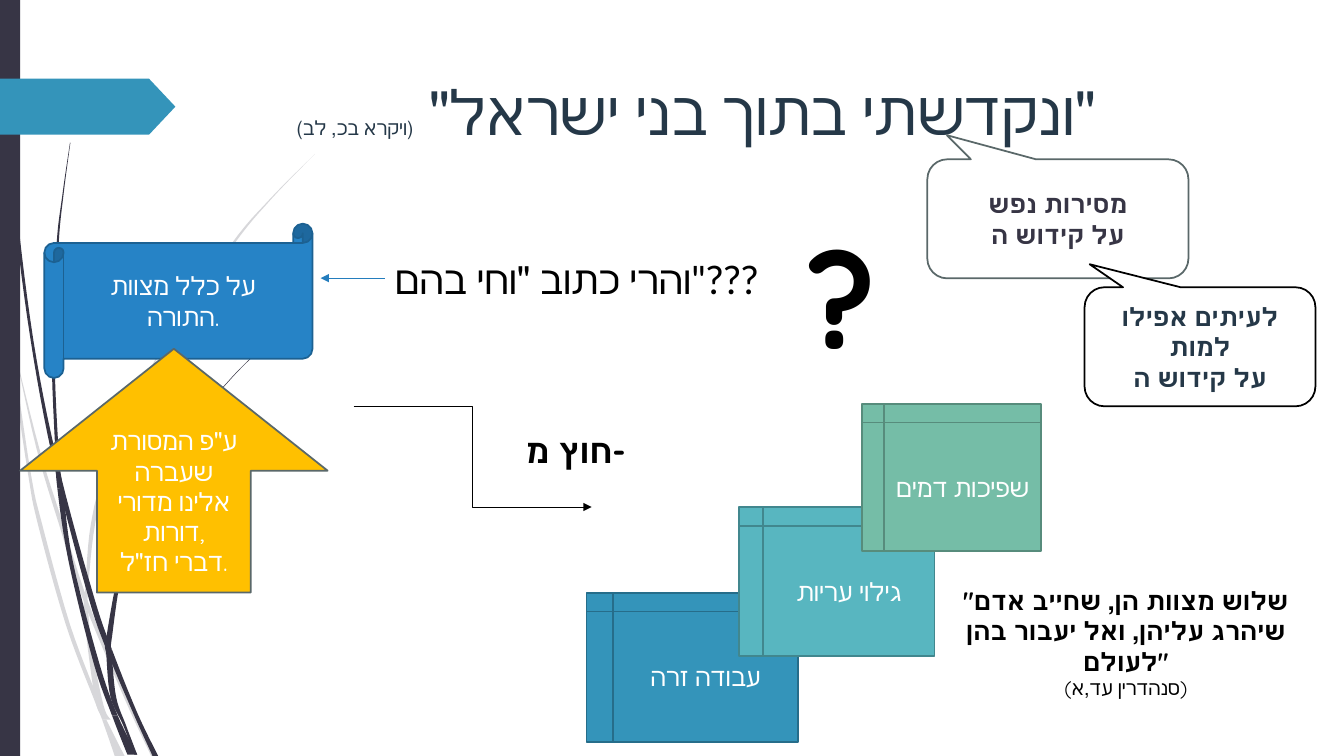
import pptx
import pptx.util
import pptx.dml.color
import pptx.enum.shapes
import pptx.enum.text
import pptx.oxml.ns
import lxml.etree

Pt = pptx.util.Pt
RGBColor = pptx.dml.color.RGBColor
KIND = pptx.enum.shapes.MSO_SHAPE
LINK = pptx.enum.shapes.MSO_CONNECTOR
ALIGN = pptx.enum.text.PP_ALIGN
ANCHOR = pptx.enum.text.MSO_ANCHOR
qn = pptx.oxml.ns.qn

DARK = RGBColor(0x37, 0x35, 0x45)
PALE = RGBColor(0xD7, 0xD7, 0xDA)
NAVY = RGBColor(0x25, 0x38, 0x48)
TEAL = RGBColor(0x34, 0x94, 0xBA)
DEEP = RGBColor(0x26, 0x6D, 0x8A)
AQUA = RGBColor(0x58, 0xB6, 0xC0)
POOL = RGBColor(0x41, 0x87, 0x8E)
MINT = RGBColor(0x75, 0xBD, 0xA7)
MOSS = RGBColor(0x57, 0x8C, 0x7C)
BLUE = RGBColor(0x26, 0x83, 0xC6)
INK = RGBColor(0x1C, 0x61, 0x92)
SKY = RGBColor(0x24, 0x7D, 0xBD)
GOLD = RGBColor(0xFF, 0xC0, 0x00)
GREY = RGBColor(0x5A, 0x68, 0x69)
BLACK = RGBColor(0, 0, 0)
WHITE = RGBColor(0xFF, 0xFF, 0xFF)
SANS = "Quicksand"


def dress(shape, fill, edge=None):
    shape.shadow.inherit = False
    shape.fill.solid()
    shape.fill.fore_color.rgb = fill
    if edge is None:
        shape.line.fill.background()
    else:
        shape.line.color.rgb = edge
        shape.line.width = Pt(1.25)


def write(frame, paras, color, align, anchor):
    frame.word_wrap = True
    frame.vertical_anchor = anchor
    for i, runs in enumerate(paras):
        para = frame.paragraphs[0] if i == 0 else frame.add_paragraph()
        para.alignment = align
        for text, size, face, bold in runs:
            run = para.add_run()
            run.text = text
            run.font.size = Pt(size)
            run.font.name = face
            run.font.bold = bold
            run.font.color.rgb = color


deck = pptx.Presentation()
deck.slide_width, deck.slide_height = Pt(960), Pt(540)
slide = deck.slides.add_slide(deck.slide_layouts[5])
shapes = slide.shapes

strands = [
    (PALE, (1, 6), [(0, 1, 209), (7, 9, 252), (20, 22, 338), (27, 30, 374),
                    (47, 50, 446), (67, 70, 499), (73, 76, 514), (82, 89, 540)]),
    (PALE, (3,), [(10, 10, 248), (26, 28, 320), (42, 45, 374), (60, 63, 430),
                  (89, 91, 499), (108, 112, 540)]),
    (PALE, (6, 7), [(225, 225, 110), (193, 194, 142), (164, 166, 176),
                    (114, 115, 251), (77, 79, 332), (65, 68, 374), (61, 63, 420),
                    (60, 63, 436), (63, 66, 465), (69, 74, 504), (76, 79, 514)]),
    (DARK, (4, 6), [(2, 3, 0), (5, 6, 79), (12, 14, 168), (24, 26, 256),
                    (40, 43, 338), (63, 67, 426), (76, 80, 464), (95, 98, 509),
                    (109, 113, 540)]),
    (DARK, (4, 5, 8), [(50, 50.3, 102), (44.6, 45.4, 139), (40.3, 41.8, 176),
                       (37, 39, 251), (39.6, 42, 324), (41, 45, 349),
                       (49, 52, 401), (67, 71, 474), (80, 84, 511), (91, 98, 539)]),
    (DARK, (5, 6, 8), [(187, 187.5, 248), (166, 166.5, 269), (147, 147.7, 292),
                       (112, 113.5, 342), (88, 90, 397), (76, 80, 455),
                       (76, 80, 468), (79, 83, 498), (88, 90, 518), (96, 98, 539)]),
]
for color, cuts, rows in strands:
    ends = [rows[0]] + rows + [rows[-1]]
    curve = []
    for a, b, c, d in zip(ends, ends[1:], ends[2:], ends[3:]):
        for step in range(6):
            t = step / 6
            curve.append([
                q + t * (r - p + t * (2 * p - 5 * q + 4 * r - s
                                      + t * (3 * q - p - 3 * r + s))) / 2
                for p, q, r, s in zip(a, b, c, d)])
    curve.append(rows[-1])
    for start, stop in zip((0, *cuts), (*cuts, len(rows) - 1)):
        part = curve[start * 6:stop * 6 + 1]
        left = [(x * 100, y * 100) for x, _, y in part]
        right = [(x * 100, y * 100) for _, x, y in part]
        edge = left + right[::-1]
        pen = shapes.build_freeform(*edge[0], scale=Pt(0.01))
        pen.add_line_segments(edge[1:], close=True)
        dress(pen.convert_to_shape(), color)

bar = shapes.add_shape(KIND.RECTANGLE, 0, 0, Pt(14.4), Pt(540))
dress(bar, DARK)
flag = shapes.add_shape(KIND.PENTAGON, 0, Pt(56.2), Pt(125.3), Pt(40))
flag.adjustments[0] = 0.47
dress(flag, TEAL)

title = shapes.title
title.element.getparent().append(title.element)
title.left, title.top, title.width, title.height = Pt(204.5), Pt(49), Pt(702), Pt(100.8)
write(title.text_frame, [[('"ונקדשתי בתוך בני ישראל" ', 44, "Lato", False),
                          ("(ויקרא בכ, לב)", 14, SANS, False)]],
      NAVY, ALIGN.LEFT, ANCHOR.TOP)
title.text_frame.paragraphs[0]._p.get_or_add_pPr().set("rtl", "1")

cards = [
    (KIND.ROUNDED_RECTANGULAR_CALLOUT, (662.4, 113.8, 186.5, 85), (-0.425, -0.703),
     WHITE, GREY, DARK, True, ["מסירות נפש", "על קידוש ה"]),
    (KIND.ROUNDED_RECTANGULAR_CALLOUT, (774.7, 205.2, 164.9, 85), (-0.478, -0.694),
     WHITE, BLACK, NAVY, True, ["לעיתים אפילו למות", "על קידוש ה"]),
    (KIND.HORIZONTAL_SCROLL, (31.7, 159.8, 191.5, 110.2), (),
     BLUE, INK, WHITE, False, ["על כלל מצוות התורה."]),
    (KIND.FLOWCHART_INTERNAL_STORAGE, (419, 423.4, 151.2, 106.6), (),
     TEAL, DEEP, WHITE, False, ["עבודה זרה"]),
    (KIND.FLOWCHART_INTERNAL_STORAGE, (527.8, 362.2, 139.7, 106.6), (),
     AQUA, POOL, WHITE, False, ["גילוי עריות"]),
    (KIND.FLOWCHART_INTERNAL_STORAGE, (615.6, 288.7, 128.2, 105.1), (),
     MINT, MOSS, WHITE, False, ["שפיכות דמים"]),
    (KIND.UP_ARROW, (14.4, 249.1, 219.6, 174.2), (),
     GOLD, GREY, WHITE, False,
     ['ע"פ המסורת שעברה אלינו מדורי דורות,', 'דברי חז"ל.']),
]
for kind, box, bends, fill, edge, color, bold, lines in cards:
    card = shapes.add_shape(kind, *map(Pt, box))
    for i, bend in enumerate(bends):
        card.adjustments[i] = bend
    dress(card, fill, edge)
    write(card.text_frame, [[(line, 18, SANS, bold)] for line in lines],
          color, ALIGN.CENTER, ANCHOR.MIDDLE)

notes = [
    ((568, 149.8, 59.8, 123.8), ALIGN.LEFT, [[("?", 96, SANS, True)]]),
    ((275, 178.6, 322.6, 41), ALIGN.LEFT,
     [[("והרי כתוב ", 28, SANS, False), ('"וחי בהם"???', 28, "Lato", False)]]),
    ((678.2, 414.7, 252, 90), ALIGN.CENTER,
     [[('"שלוש מצוות הן, שחייב אדם שיהרג עליהן, ואל יעבור בהן לעולם"', 18, SANS, True)],
      [("(סנהדרין עד,א)", 14, SANS, False)]]),
    ((368.6, 303.8, 110.9, 36), ALIGN.LEFT, [[("חוץ מ-", 24, SANS, True)]]),
]
for box, align, paras in notes:
    note = shapes.add_textbox(*map(Pt, box))
    write(note.text_frame, paras, BLACK, align, ANCHOR.TOP)

links = [
    (LINK.STRAIGHT, (275, 198.7, 229, 198.7), SKY),
    (LINK.ELBOW, (252.7, 290.2, 422.6, 362.2), BLACK),
]
for kind, ends, color in links:
    link = shapes.add_connector(kind, *map(Pt, ends))
    link.line.color.rgb = color
    link.line.width = Pt(0.75)
    lxml.etree.SubElement(link.line._get_or_add_ln(), qn("a:tailEnd"), type="triangle")
    lxml.etree.SubElement(link._element.spPr, qn("a:effectLst"))

deck.save("out.pptx")
